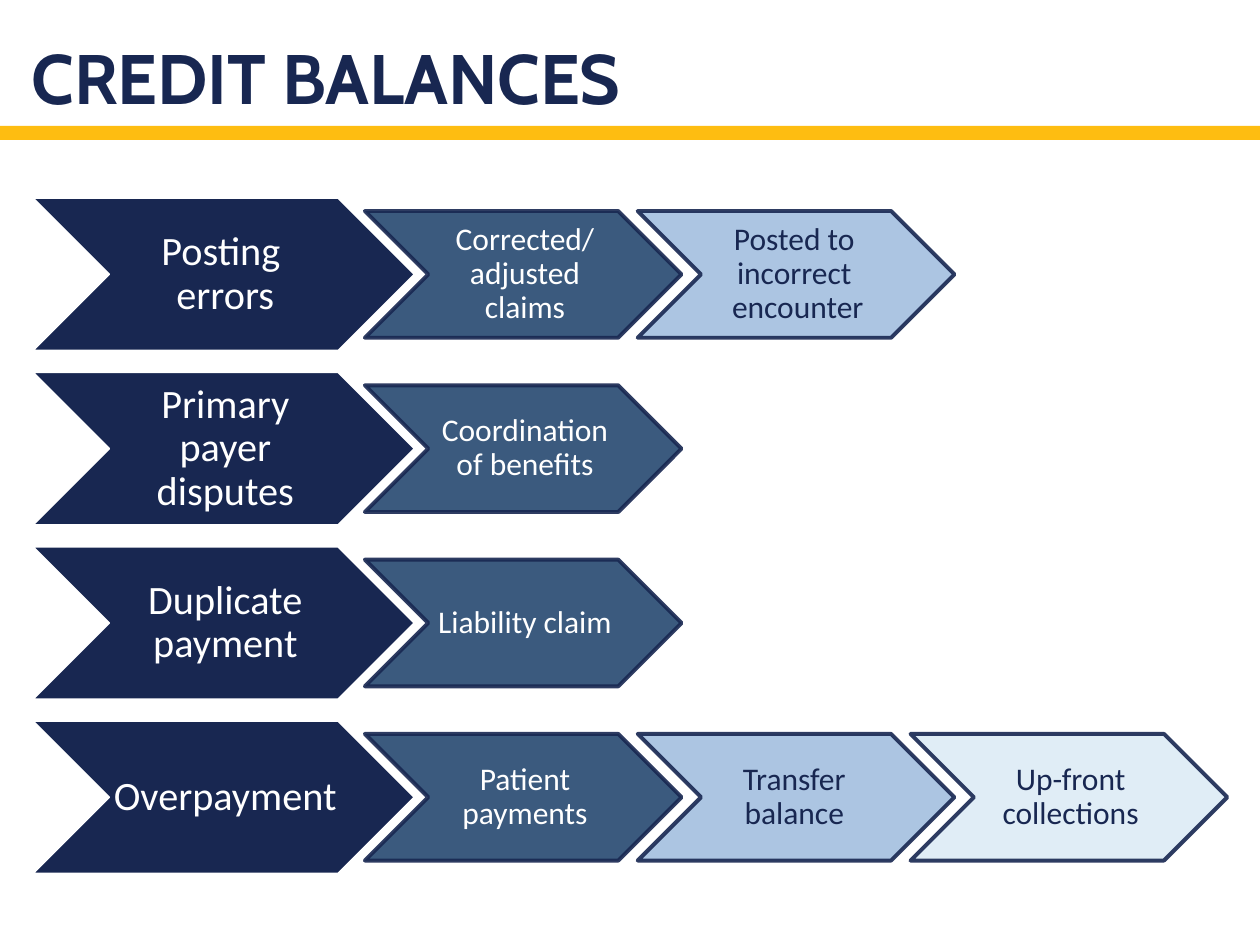
"""Build the credit balances slide: four rows of chevrons under a title."""
from lxml import etree
from pptx import Presentation
from pptx.dml.color import RGBColor
from pptx.enum import shapes, text
from pptx.oxml.ns import qn
from pptx.util import Pt

NAVY, WHITE, GOLD = "182751", "FFFFFF", "FEBD11"
TINTS = [("264970", WHITE), ("A3BFDF", NAVY), ("DDECF6", NAVY)]
ROWS = [
    ["Posting \verrors", "Corrected/ adjusted claims", "Posted to \vincorrect \vencounter"],
    ["Primary payer disputes", "Coordination of benefits"],
    ["Duplicate payment", "Liability claim"],
    ["Overpayment ", "Patient payments", "Transfer \vbalance ", "Up-front collections"],
]


def style(frame, words, font, size, ink, bold=False):
    frame.text = words
    frame.word_wrap = True
    frame.auto_size = text.MSO_AUTO_SIZE.NONE
    para = frame.paragraphs[0]
    para.line_spacing = 0.9
    for run in para.runs:
        run.font.name, run.font.size, run.font.bold = font, Pt(size), bold
        run.font.color.rgb = RGBColor.from_string(ink)


def draw(kind, box, fill, edge=None, width=1, alpha=100):
    shape = slide.shapes.add_shape(kind, *[Pt(v) for v in box])
    shape.shadow.inherit = False
    shape.fill.solid()
    shape.fill.fore_color.rgb = RGBColor.from_string(fill)
    if edge:
        shape.line.color.rgb = RGBColor.from_string(edge)
        shape.line.width = Pt(width)
    else:
        shape.line.fill.background()
    if alpha < 100:
        for tone in shape._element.spPr.iter(qn("a:srgbClr")):
            etree.SubElement(tone, qn("a:alpha"), val=str(alpha * 1000))
    return shape


deck = Presentation()
deck.slide_width, deck.slide_height = Pt(720), Pt(540)
slide = deck.slides.add_slide(deck.slide_layouts[5])

draw(shapes.MSO_SHAPE.RECTANGLE, (0, 72, 720, 8), GOLD)

title = slide.shapes.title
title.left, title.top, title.width, title.height = Pt(18), Pt(0), Pt(684), Pt(72)
frame = title.text_frame
style(frame, "CREDIT BALANCES", "Cabin", 40, NAVY, True)
frame.margin_left = frame.margin_right = 0
frame.vertical_anchor = text.MSO_ANCHOR.BOTTOM
frame.paragraphs[0].alignment = text.PP_ALIGN.LEFT

for row, labels in enumerate(ROWS):
    top = 113.2 + 99.6 * row
    for col, label in enumerate(labels):
        if col == 0:
            box, size, ink = (18.8, top, 218, 87.2), 23, WHITE
            shape = draw(shapes.MSO_SHAPE.CHEVRON, box, NAVY, WHITE)
        else:
            fill, ink = TINTS[col - 1]
            box, size = (208.5 + 155.9 * (col - 1), top + 7.4, 181, 72.4), 18
            shape = draw(shapes.MSO_SHAPE.CHEVRON, box, fill, NAVY, 2.25, 90)
        frame = shape.text_frame
        style(frame, label, "Calibri", size, ink)
        frame.margin_left, frame.margin_right = Pt(2), 0
        frame.margin_top = frame.margin_bottom = Pt(1)
        frame.vertical_anchor = text.MSO_ANCHOR.MIDDLE
        frame.paragraphs[0].alignment = text.PP_ALIGN.CENTER

deck.save("out.pptx")
